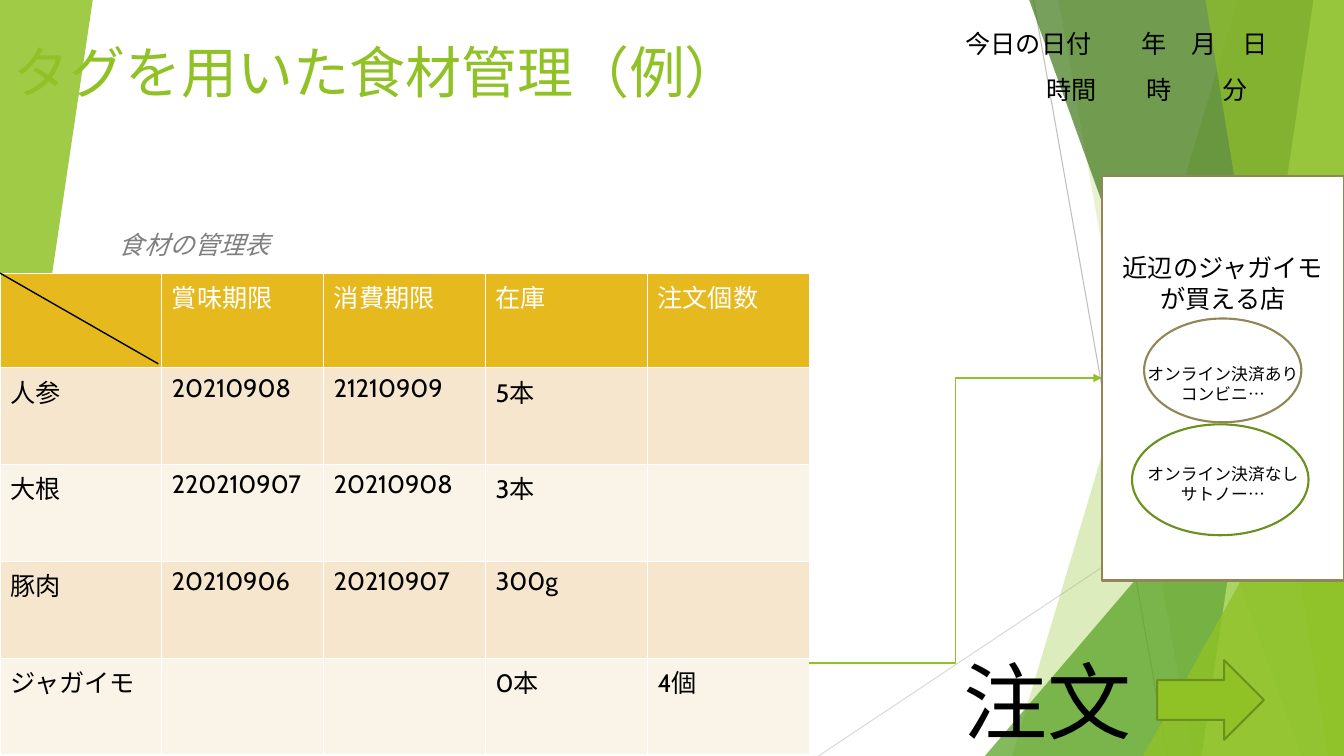
from dataclasses import dataclass

from lxml.etree import SubElement
from pptx import Presentation
from pptx.dml.color import RGBColor
from pptx.enum.shapes import MSO_CONNECTOR as Link, MSO_SHAPE as Preset
from pptx.enum.text import MSO_ANCHOR as Anchor, MSO_AUTO_SIZE as Fit, PP_ALIGN as Align
from pptx.oxml.ns import qn
from pptx.util import Inches, Pt

WIDTH, HEIGHT = Inches(13.333), Inches(7.5)
FONT = "Cabin"
GREEN = RGBColor(0x90, 0xC2, 0x26)
LEAF = RGBColor(0x54, 0xA0, 0x21)
FOREST = RGBColor(0x3F, 0x78, 0x19)
LIME = RGBColor(0xC0, 0xE4, 0x74)
MOSS = RGBColor(0x6B, 0x90, 0x1C)
OLIVE = RGBColor(0x91, 0x86, 0x55)
GOLD = RGBColor(0xE6, 0xB9, 0x1E)
SAND = RGBColor(0xF5, 0xE6, 0xCD)
CREAM = RGBColor(0xFA, 0xF3, 0xE8)
GREY = RGBColor(0x80, 0x80, 0x80)
SILVER = RGBColor(0xBF, 0xBF, 0xBF)
MIST = RGBColor(0xD9, 0xD9, 0xD9)
BLACK = RGBColor(0, 0, 0)
WHITE = RGBColor(0xFF, 0xFF, 0xFF)


@dataclass
class Box:
    """Place and size in percent of the slide's width and height."""
    left: float
    top: float
    width: float
    height: float

    def emu(self) -> tuple:
        return across(self.left), down(self.top), across(self.width), down(self.height)


@dataclass
class Band:
    """Full-height facet: slanted left edge, right edge on the slide's border."""
    top_x: float
    bottom_x: float
    color: RGBColor
    opacity: int


@dataclass
class Wedge:
    box: Box
    color: RGBColor
    opacity: int
    rotation: int = 0


@dataclass
class Label:
    box: Box
    text: str
    size: int
    tabs: tuple = ()


@dataclass
class Outline:
    preset: Preset
    box: Box
    line: RGBColor
    fill: RGBColor | None = None


@dataclass
class ShopLine:
    text: str
    size: int
    gap: int = 0


FACETS = [
    Band(92.1, 75.3, GREEN, 30),
    Band(78.75, 88.73, GREEN, 20),
    Wedge(Box(73.28, 44.4, 26.72, 55.6), LEAF, 72),
    Band(76.58, 96.83, FOREST, 70),
    Band(97.73, 89.4, LIME, 70),
    Band(89.7, 98.85, GREEN, 65),
    Wedge(Box(85.05, 52.4, 14.95, 47.6), GREEN, 80),
    Wedge(Box(0, 0, 6.9, 82.67), GREEN, 85, 180),
]
STOCK = [
    ("", "賞味期限", "消費期限", "在庫", "注文個数"),
    ("人参", "20210908", "21210909", "5本", ""),
    ("大根", "220210907", "20210908", "3本", ""),
    ("豚肉", "20210906", "20210907", "300g", ""),
    ("ジャガイモ", "", "", "0本", "4個"),
]
LABELS = [
    Label(Box(71.1, 3.07, 26.18, 5.33), "今日の日付\t年\t月\t日", 18, (1.75, 2.24, 2.75)),
    Label(Box(77.1, 9.2, 16.95, 5.33), "時間\t時\t分", 18, (1, 1.75)),
    Label(Box(70.95, 85.2, 26.33, 14.8), "注文", 60),
]
SHOP_PANEL = Outline(Preset.RECTANGLE, Box(81.98, 23.33, 18.02, 53.47), OLIVE, WHITE)
OUTLINES = [
    Outline(Preset.RIGHT_ARROW, Box(86.1, 87.33, 7.95, 10.53), MOSS, GREEN),
    Outline(Preset.OVAL, Box(85.13, 42.13, 11.7, 13.73), OLIVE),
    Outline(Preset.OVAL, Box(84.23, 56.13, 13.13, 14.67), MOSS),
]
SHOP_LINES = [
    ShopLine("近辺のジャガイモが買える店", 18),
    ShopLine("オンライン決済あり", 12, 36),
    ShopLine("コンビニ…", 12),
    ShopLine("オンライン決済なし", 12, 43),
    ShopLine("サトノー…", 12),
]


def across(share: float) -> int:
    return round(WIDTH * share / 100)


def down(share: float) -> int:
    return round(HEIGHT * share / 100)


def style(paragraph, size: int, color: RGBColor, italic: bool = False) -> None:
    for run in paragraph.runs:
        run.font.name, run.font.size = FONT, Pt(size)
        run.font.bold, run.font.italic = False, italic
        run.font.color.rgb = color


def add_facet(shapes, facet: Band | Wedge) -> None:
    if isinstance(facet, Band):
        outline = shapes.build_freeform(across(facet.top_x), 0)
        outline.add_line_segments([(WIDTH, 0), (WIDTH, HEIGHT), (across(facet.bottom_x), HEIGHT)])
        pane = outline.convert_to_shape()
    else:
        pane = shapes.add_shape(Preset.ISOSCELES_TRIANGLE, *facet.box.emu())
        pane.adjustments[0] = 1
        pane.rotation = facet.rotation
    pane.shadow.inherit = False
    pane.line.fill.background()
    pane.fill.solid()
    pane.fill.fore_color.rgb = facet.color
    color = pane.fill._xPr.find(".//" + qn("a:srgbClr"))
    SubElement(color, qn("a:alpha"), val=str(facet.opacity * 1000))


def add_line(shapes, kind: Link, start: tuple, end: tuple, color: RGBColor,
             width: float, arrow: bool = False) -> None:
    line = shapes.add_connector(kind, across(start[0]), down(start[1]), across(end[0]), down(end[1]))
    line.line.color.rgb, line.line.width = color, Pt(width)
    if arrow:
        SubElement(line.line._get_or_add_ln(), qn("a:tailEnd"), type="triangle")
    SubElement(line._element.spPr, qn("a:effectLst"))


def add_outline(shapes, part: Outline):
    figure = shapes.add_shape(part.preset, *part.box.emu())
    figure.shadow.inherit = False
    figure.line.color.rgb, figure.line.width = part.line, Pt(1.5)
    if part.fill is None:
        figure.fill.background()
    else:
        figure.fill.solid()
        figure.fill.fore_color.rgb = part.fill
    return figure


def add_label(shapes, label: Label) -> None:
    frame = shapes.add_textbox(*label.box.emu()).text_frame
    frame.word_wrap, frame.auto_size = True, Fit.SHAPE_TO_FIT_TEXT
    frame.text = label.text
    style(frame.paragraphs[0], label.size, BLACK)
    if label.tabs:
        stops = SubElement(frame.paragraphs[0]._p.get_or_add_pPr(), qn("a:tabLst"))
        for stop in label.tabs:
            SubElement(stops, qn("a:tab"), pos=str(Inches(stop)), algn="l")


def fill_heading(holder, box: Box, label: str, size: int, color: RGBColor, italic: bool) -> None:
    holder.left, holder.top, holder.width, holder.height = box.emu()
    frame = holder.text_frame
    frame.text, frame.auto_size = label, Fit.NONE
    frame.paragraphs[0].alignment = Align.RIGHT
    style(frame.paragraphs[0], size, color, italic)
    holder._element.getparent().append(holder._element)  # in front of the facets


def add_stock_table(shapes) -> None:
    table = shapes.add_table(len(STOCK), len(STOCK[0]), *Box(0, 36.13, 60.23, 63.87).emu()).table
    for r, foods in enumerate(STOCK):
        table.rows[r].height = down(12.8 if r else 12.53)
        for c, entry in enumerate(foods):
            cell = table.cell(r, c)
            cell.text = entry
            cell.fill.solid()
            cell.fill.fore_color.rgb = (SAND if r % 2 else CREAM) if r else GOLD
            style(cell.text_frame.paragraphs[0], 18, BLACK if r else WHITE)


def add_shop_panel(shapes) -> None:
    frame = add_outline(shapes, SHOP_PANEL).text_frame
    frame.word_wrap, frame.vertical_anchor = True, Anchor.MIDDLE
    for i, entry in enumerate(SHOP_LINES):
        paragraph = frame.add_paragraph() if i else frame.paragraphs[0]
        paragraph.text, paragraph.alignment = entry.text, Align.CENTER
        paragraph.space_before = Pt(entry.gap)
        style(paragraph, entry.size, BLACK)


def main() -> None:
    deck = Presentation()
    deck.slide_width, deck.slide_height = WIDTH, HEIGHT
    slide = deck.slides.add_slide(deck.slide_layouts[0])
    shapes = slide.shapes

    # Faceted background
    add_line(shapes, Link.STRAIGHT, (76.9, 0), (86.85, 100), SILVER, 0.75)
    add_line(shapes, Link.STRAIGHT, (100, 53.73), (60.9, 100), MIST, 0.75)
    for facet in FACETS:
        add_facet(shapes, facet)

    # Title and table caption
    title, caption = shapes.title, slide.placeholders[1]
    fill_heading(title, Box(0, 2.4, 55.88, 12.13), "タグを用いた食材管理（例）", 40, GREEN, False)
    title.text_frame.vertical_anchor = Anchor.BOTTOM
    fill_heading(caption, Box(0, 29.6, 20.85, 6.67), "食材の管理表", 18, GREY, True)
    caption.text_frame.paragraphs[0].space_before = Pt(10)

    # Stock table with its struck-out corner
    add_stock_table(shapes)
    add_line(shapes, Link.STRAIGHT, (0, 36.13), (11.78, 48.13), BLACK, 1)

    # Date, time and order labels
    for label in LABELS:
        add_label(shapes, label)

    # Shops that sell the missing food
    add_line(shapes, Link.ELBOW, (60.23, 87.73), (81.98, 50), GREEN, 1, arrow=True)
    add_shop_panel(shapes)
    for part in OUTLINES:
        add_outline(shapes, part)

    deck.save("out.pptx")


if __name__ == "__main__":
    main()
